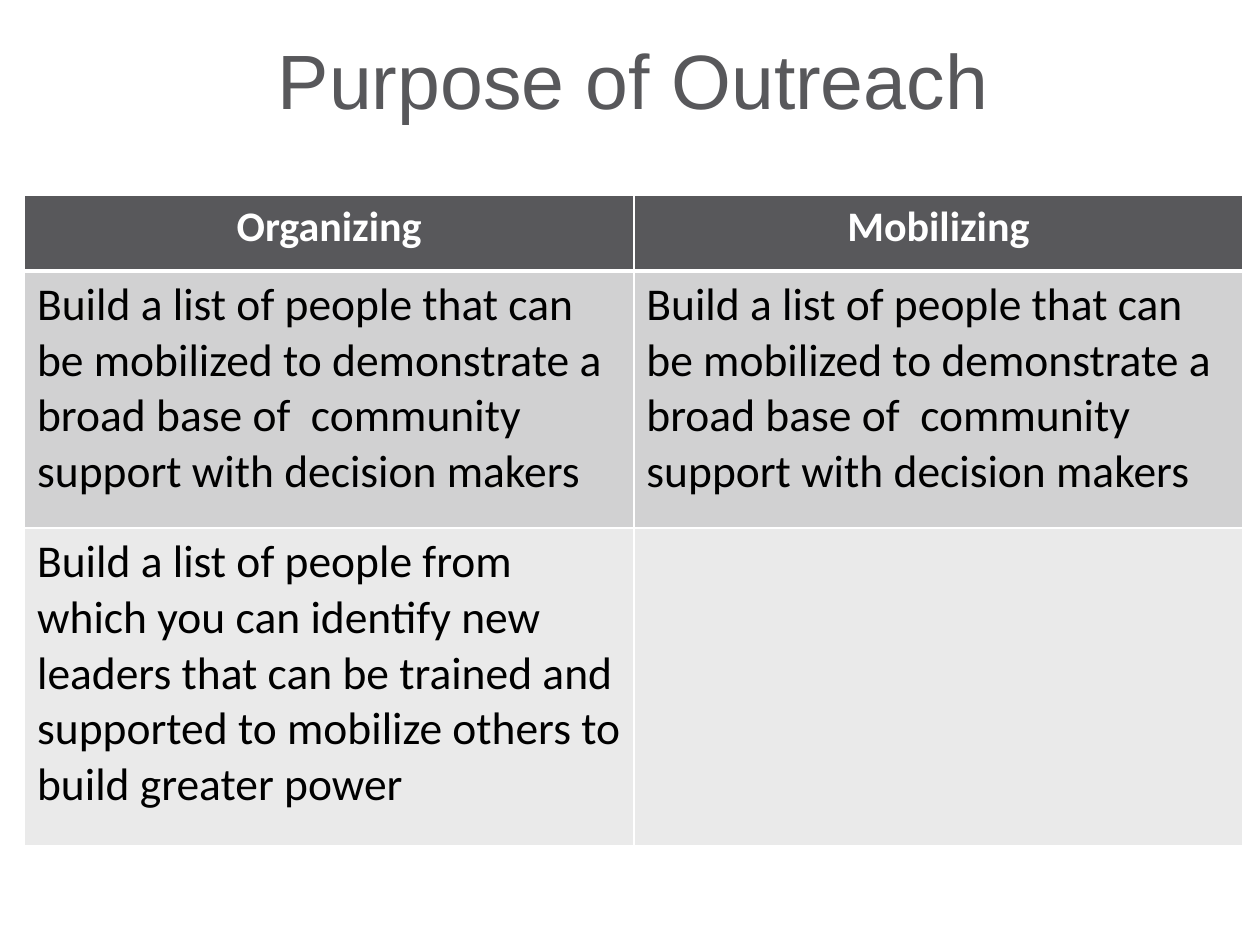
from lxml import etree
from pptx import Presentation
from pptx.dml.color import RGBColor
from pptx.enum.text import MSO_ANCHOR, PP_ALIGN
from pptx.oxml.ns import qn
from pptx.util import Pt

CENTER, LEFT = PP_ALIGN.CENTER, PP_ALIGN.LEFT
MIDDLE = MSO_ANCHOR.MIDDLE

# Content
TITLE = "Purpose of Outreach"
SHARED = ("Build a list of people that can be mobilized to demonstrate a broad "
          "base of  community support with decision makers")
LEADERS = ("Build a list of people from which you can identify new leaders that "
           "can be trained and supported to mobilize others to build greater power")
ROWS = [
    ("Organizing", "Mobilizing"),
    (SHARED, SHARED),
    (LEADERS, ""),
]

# Formats
TITLE_FONT = {"name": "Arial", "size": Pt(44), "bold": False}
HEAD_FONT = {"name": "Calibri", "size": Pt(24), "bold": True}
BODY_FONT = {"name": "Calibri", "size": Pt(26), "bold": False}
# One entry per row: height, fill, text colour, alignment, font
ROW_STYLES = [
    (43.2, "58585B", "FFFFFF", CENTER, HEAD_FONT),
    (146.9, "D1D1D2", "000000", LEFT, BODY_FONT),
    (181.4, "EAEAEA", "000000", LEFT, BODY_FONT),
]
TABLE_LEFT, TABLE_TOP, COL_WIDTH = 14, 111.6, 348.2
RULE, HEAD_RULE = 1, 3


def rgb(value):
    return RGBColor.from_string(value)


def write(tf, text, align, color, font):
    p = tf.paragraphs[0]
    p.alignment = align
    target = p.font
    if text:
        r = p.add_run()
        r.text = text
        target = r.font
    for key, value in font.items():
        setattr(target, key, value)
    target.color.rgb = rgb(color)


def add_borders(cell, widths):
    tc_pr = cell._tc.get_or_add_tcPr()
    for side, width in widths.items():
        ln = etree.SubElement(tc_pr, qn(f"a:ln{side}"), w=str(Pt(width)))
        fill = etree.SubElement(ln, qn("a:solidFill"))
        etree.SubElement(fill, qn("a:srgbClr"), val="FFFFFF")


prs = Presentation()
prs.slide_width, prs.slide_height = Pt(720), Pt(540)
s = prs.slides.add_slide(prs.slide_layouts[6])

# Title
tf = s.shapes.add_textbox(Pt(38), Pt(0), Pt(648), Pt(90)).text_frame
tf.word_wrap = True
tf.vertical_anchor = MIDDLE
write(tf, TITLE, CENTER, "58585B", TITLE_FONT)

# Table
n_cols = len(ROWS[0])
height = sum(style[0] for style in ROW_STYLES)
table = s.shapes.add_table(len(ROWS), n_cols, Pt(TABLE_LEFT), Pt(TABLE_TOP),
                           Pt(n_cols * COL_WIDTH), Pt(height)).table
for col in table.columns:
    col.width = Pt(COL_WIDTH)

for i, (texts, style) in enumerate(zip(ROWS, ROW_STYLES)):
    row_height, fill, color, align, font = style
    table.rows[i].height = Pt(row_height)
    widths = {"L": RULE, "R": RULE,
              "T": HEAD_RULE if i == 1 else RULE,
              "B": HEAD_RULE if i == 0 else RULE}
    for j, text in enumerate(texts):
        cell = table.cell(i, j)
        add_borders(cell, widths)
        cell.fill.solid()
        cell.fill.fore_color.rgb = rgb(fill)
        write(cell.text_frame, text, align, color, font)

prs.save("out.pptx")
